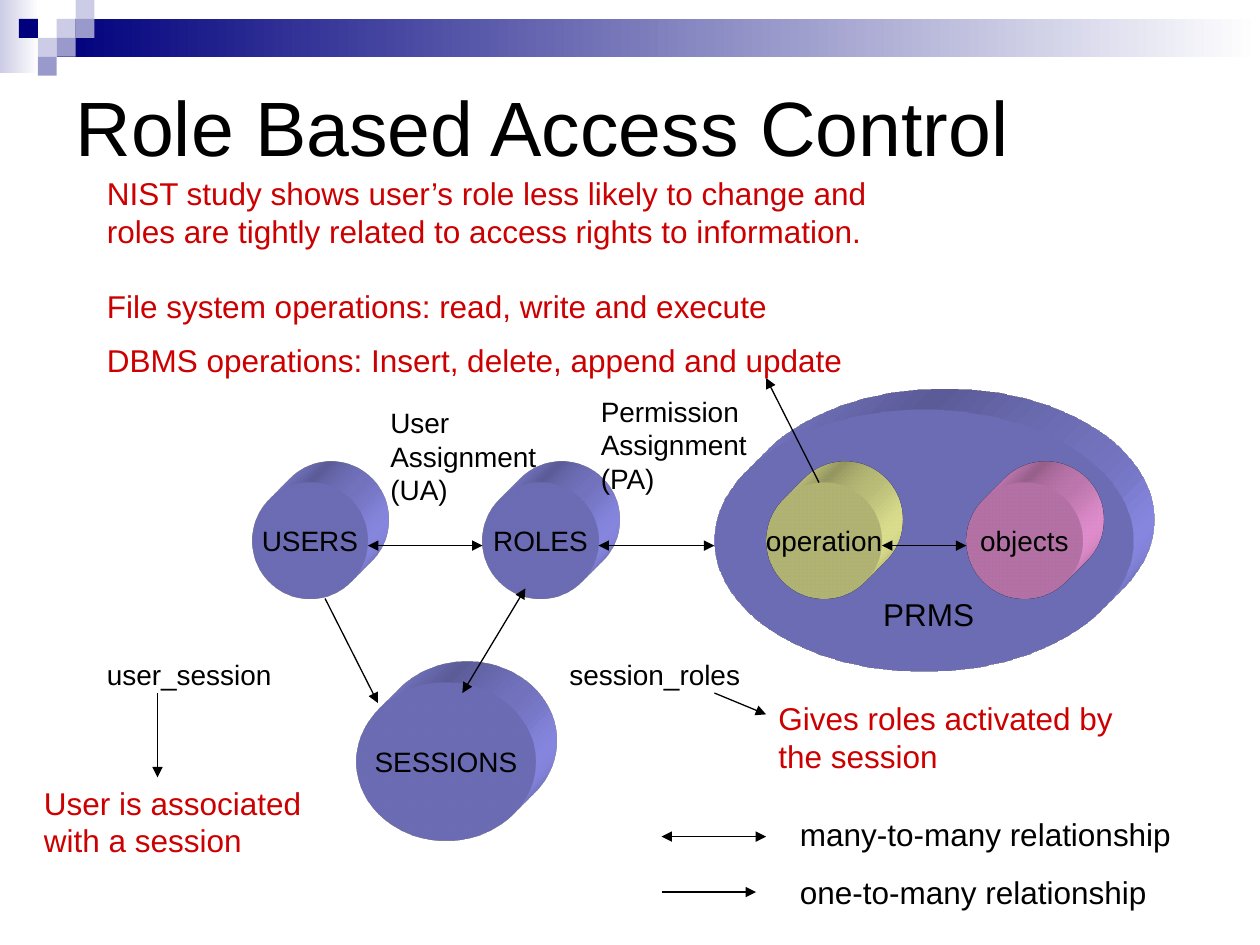
from lxml import etree
from pptx import Presentation
from pptx.dml import color
from pptx.enum import shapes, text
from pptx.oxml import ns, parse_xml
from pptx.util import Inches, Pt

COLORS = {
    "black": "000000", "red": "CC0000", "white": "FFFFFF", "navy": "00007D",
    "pale": "CCCCE6", "mid": "9999CC", "blue": "9999FF",
    "yellow": "F9FDA1", "pink": "FEA0E8",
}
A = 'xmlns:a="http://schemas.openxmlformats.org/drawingml/2006/main"'


def rgb(name):
    return color.RGBColor.from_string(COLORS[name])


def write(frame, paragraphs, size, ink="black", align=None, gaps=()):
    """Fill a text frame; gaps holds the space before each paragraph."""
    for i, words in enumerate(paragraphs):
        para = frame.paragraphs[0] if i == 0 else frame.add_paragraph()
        para.text = words
        para.alignment = align
        para.space_before = Pt(gaps[i] if gaps else 0)
        looks = {"size": Pt(size), "name": "Arial"}
        for run in para.runs:
            for key, value in looks.items():
                setattr(run.font, key, value)
            run.font.color.rgb = rgb(ink)


prs = Presentation()
prs.slide_width, prs.slide_height = Inches(10), Inches(7.5)
slide = prs.slides.add_slide(prs.slide_layouts[5])

# Header bands and checker squares
bands = [((0, 0, 0.31, 0.58), "pale"), ((0.45, 0.15, 9.55, 0.3), "navy")]
for box, start in bands:
    band = slide.shapes.add_shape(shapes.MSO_SHAPE.RECTANGLE, *map(Inches, box))
    band.shadow.inherit = False
    band.line.fill.background()
    band.fill.gradient()
    band.fill.gradient_angle = 0
    for stop, tint in zip(band.fill.gradient_stops, (start, "white")):
        stop.color.rgb = rgb(tint)
        stop.position = 0 if tint == start else 1

squares = [(3, 1, "pale"), (4, 0, "pale"), (4, 1, "mid"), (2, 2, "pale"),
           (1, 1, "navy"), (3, 2, "mid"), (2, 3, "mid")]
for column, row, tint in squares:
    square = slide.shapes.add_shape(
        shapes.MSO_SHAPE.RECTANGLE, Inches(column * 0.15), Inches(row * 0.15),
        Inches(0.15), Inches(0.15))
    square.shadow.inherit = False
    square.line.fill.background()
    square.fill.solid()
    square.fill.fore_color.rgb = rgb(tint)

# Title
title = slide.shapes.title
title_place = {"left": 0.5, "top": 0.25, "width": 9, "height": 1.5}
for key, value in title_place.items():
    setattr(title, key, Inches(value))
title.text_frame.vertical_anchor = text.MSO_ANCHOR.MIDDLE
write(title.text_frame, ["Role Based Access Control"], 44,
      align=text.PP_ALIGN.LEFT)

# Extruded ellipses for the parts of the model
entities = [
    ("USERS", (2, 3.83, 0.92, 0.92), "blue"),
    ("ROLES", (3.83, 3.83, 0.92, 0.92), "blue"),
    ("SESSIONS", (2.83, 5.42, 1.42, 1.25), "blue"),
    ("", (5.67, 3.25, 3.33, 2.08), "blue"),
    ("operation", (6.08, 3.83, 0.92, 0.92), "yellow"),
    ("objects", (7.67, 3.83, 0.92, 0.92), "pink"),
]
for label, box, tint in entities:
    entity = slide.shapes.add_shape(shapes.MSO_SHAPE.OVAL, *map(Inches, box))
    entity.shadow.inherit = False
    entity.line.fill.background()
    entity.fill.solid()
    entity.fill.fore_color.rgb = rgb(tint)
    properties = entity._element.spPr
    properties.append(parse_xml(
        f'<a:scene3d {A}><a:camera prst="legacyObliqueTopRight"/>'
        '<a:lightRig rig="legacyFlat3" dir="b"/></a:scene3d>'))
    properties.append(parse_xml(
        f'<a:sp3d {A} extrusionH="430200" prstMaterial="legacyMatte">'
        '<a:bevelT w="13500" h="13500" prst="angle"/>'
        '<a:bevelB w="13500" h="13500" prst="angle"/>'
        f'<a:extrusionClr><a:srgbClr val="{COLORS[tint]}"/></a:extrusionClr>'
        '</a:sp3d>'))
    if label:
        entity.text_frame.word_wrap = False
        entity.text_frame.vertical_anchor = text.MSO_ANCHOR.MIDDLE
        write(entity.text_frame, [label], 16, align=text.PP_ALIGN.CENTER)

# Relationship arrows: start, end, many-to-many
arrows = [
    ((2.58, 4.75), (3, 5.58), False),
    ((4.17, 4.67), (3.67, 5.5), True),
    ((2.92, 4.33), (3.83, 4.33), True),
    ((4.75, 4.33), (5.67, 4.33), True),
    ((7, 4.33), (7.67, 4.33), True),
    ((5.25, 6.64), (6.08, 6.64), True),
    ((5.25, 7.08), (6, 7.08), False),
    ((5.67, 5.5), (6.08, 5.67), False),
    ((1.25, 5.5), (1.25, 6.17), False),
    ((6.5, 3.83), (6.08, 3), False),
]
for start, end, both_ends in arrows:
    arrow = slide.shapes.add_connector(
        shapes.MSO_CONNECTOR.STRAIGHT, *map(Inches, start + end))
    arrow.line.color.rgb = rgb("black")
    arrow.line.width = Pt(0.75)
    for tag in ("a:headEnd", "a:tailEnd") if both_ends else ("a:tailEnd",):
        etree.SubElement(arrow.line._ln, ns.qn(tag), type="triangle")
    etree.SubElement(arrow._element.spPr, ns.qn("a:effectLst"))

# Labels, legend and red remarks
notes = [
    (["PRMS"], (6.83, 4.67, 1.08, 0.4), 18, "black"),
    (["session_roles"], (4.42, 5.17, 1.58, 0.37), 16, "black"),
    (["user_session"], (0.75, 5.17, 1.58, 0.37), 16, "black"),
    (["User\vAssignment\v(UA)"], (3, 3.17, 1.83, 0.9), 16, "black"),
    (["Permission\vAssignment\v(PA)"], (4.67, 3.08, 1.83, 0.9), 16, "black"),
    (["many-to-many relationship"], (6.25, 6.42, 3.42, 0.4), 18, "black"),
    (["one-to-many relationship"], (6.25, 6.88, 3, 0.4), 18, "black"),
    (["Gives roles activated by the session"], (6.08, 5.5, 3.25, 0.7), 18, "red"),
    (["User is associated with a session"], (0.25, 6.17, 2.25, 0.7), 18, "red"),
    (["NIST study shows user’s role less likely to change and roles are "
      "tightly related to access rights to information.",
      "File system operations: read, write and execute",
      "DBMS operations: Insert, delete, append and update"],
     (0.75, 1.33, 6.83, 1.75), 18, "red"),
]
for paragraphs, box, size, ink in notes:
    note = slide.shapes.add_textbox(*map(Inches, box))
    note.text_frame.word_wrap = True
    note.text_frame.auto_size = text.MSO_AUTO_SIZE.SHAPE_TO_FIT_TEXT
    centred = text.PP_ALIGN.CENTER if paragraphs == ["PRMS"] else None
    write(note.text_frame, paragraphs, size, ink, centred, (0, 21.6, 9))

prs.save("out.pptx")
